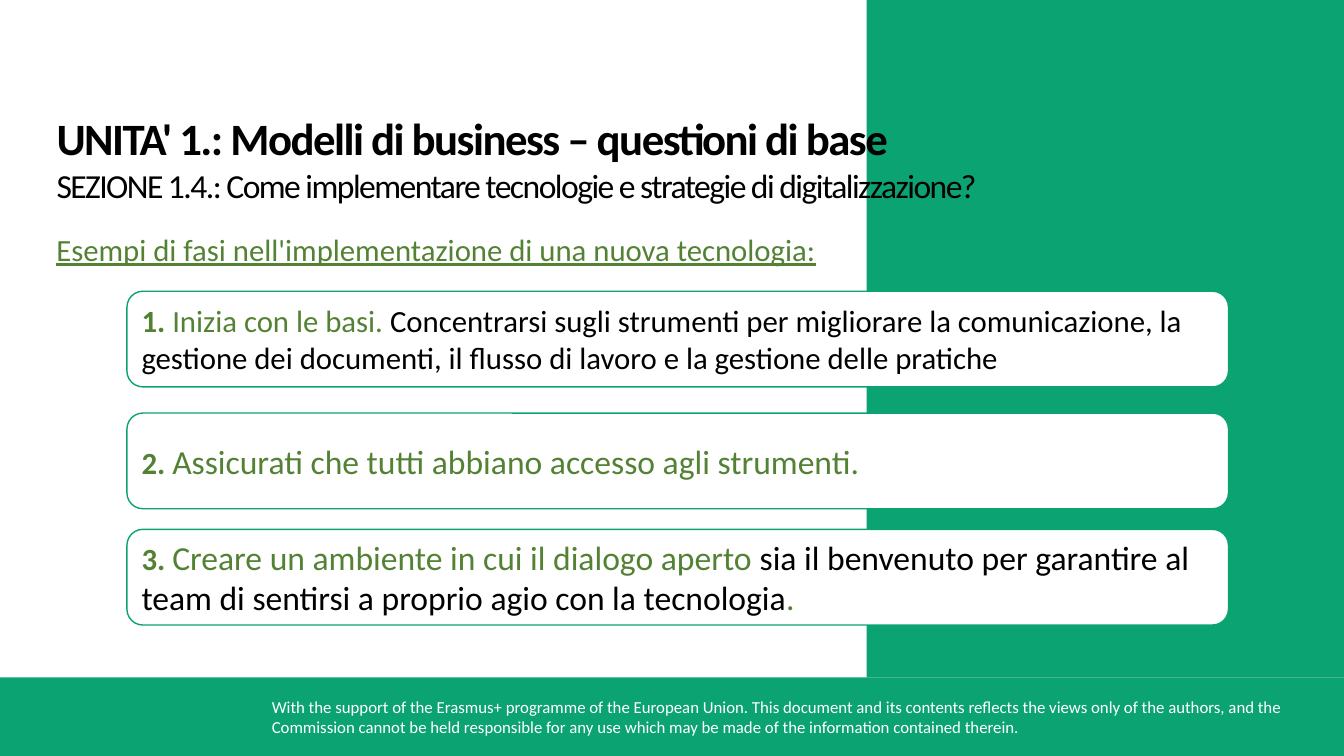
from pptx import Presentation
from pptx.dml.color import RGBColor
from pptx.enum.shapes import MSO_SHAPE
from pptx.enum.text import MSO_ANCHOR, PP_ALIGN
from pptx.util import Cm, Pt

COLORS = {
    "green": "0CA373",
    "accent": "548235",
    "black": "000000",
    "white": "FFFFFF",
}
FONT = "Calibri"


def add_run(paragraph, text, size, color, bold=False):
    run = paragraph.add_run()
    run.text = text
    run.font.name = FONT
    run.font.size = Pt(size)
    run.font.bold = bold
    run.font.color.rgb = RGBColor.from_string(COLORS[color])
    return run


def add_filled_shape(preset, left, top, width, height, fill):
    shape = slide.shapes.add_shape(preset, Cm(left), Cm(top), Cm(width), Cm(height))
    shape.shadow.inherit = False
    shape.fill.solid()
    shape.fill.fore_color.rgb = RGBColor.from_string(COLORS[fill])
    shape.line.fill.background()
    return shape


presentation = Presentation()
presentation.slide_width = Cm(33.87)
presentation.slide_height = Cm(19.05)
slide = presentation.slides.add_slide(presentation.slide_layouts[5])

# Green footer band and right-hand panel
add_filled_shape(MSO_SHAPE.RECTANGLE, 0, 17.07, 33.87, 1.98, "green")
footer = slide.shapes.add_textbox(Cm(6.6), Cm(17.42), Cm(26.47), Cm(1.27))
footer.text_frame.word_wrap = True
add_run(
    footer.text_frame.paragraphs[0],
    "With the support of the Erasmus+ programme of the European Union. "
    "This document and its contents reflects the views only of the authors, "
    "and the Commission cannot be held responsible for any use which may be "
    "made of the information contained therein.",
    12, "white",
)
add_filled_shape(MSO_SHAPE.RECTANGLE, 21.84, 0, 12.03, 17.07, "green")

# Title, brought in front of the panel
title = slide.shapes.title
slide.shapes._spTree.append(title._element)
title.left, title.top, title.width, title.height = Cm(1.17), Cm(2.67), Cm(32.39), Cm(2.8)
title_frame = title.text_frame
title_frame.word_wrap = True
title_frame.vertical_anchor = MSO_ANCHOR.TOP
title_lines = [
    ("UNITA' 1.: Modelli di business – questioni di base", 32, True),
    ("SEZIONE 1.4.: Come implementare tecnologie e strategie di digitalizzazione?", 24, False),
]
for index, (text, size, bold) in enumerate(title_lines):
    paragraph = title_frame.add_paragraph() if index else title_frame.paragraphs[0]
    paragraph.alignment = PP_ALIGN.LEFT
    run = add_run(paragraph, text, size, "black", bold)
    run._r.get_or_add_rPr().set("spc", "-110")

subtitle = slide.shapes.add_textbox(Cm(1.17), Cm(5.68), Cm(32.39), Cm(1.2))
subtitle.text_frame.word_wrap = True
subtitle_run = add_run(
    subtitle.text_frame.paragraphs[0],
    "Esempi di fasi nell'implementazione di una nuova tecnologia:",
    22, "accent",
)
subtitle_run.font.underline = True

# Numbered steps: top of the box, text size, pieces of text with their colours
steps = [
    (7.34, 22, [
        ("Inizia con le basi. ", "accent"),
        ("Concentrarsi sugli strumenti per migliorare la comunicazione, la gestione "
         "dei documenti, il flusso di lavoro e la gestione delle pratiche", "black"),
    ]),
    (10.41, 24, [
        ("Assicurati che tutti abbiano accesso agli strumenti.", "accent"),
    ]),
    (13.34, 24, [
        ("Creare un ambiente in cui il dialogo aperto ", "accent"),
        ("sia il benvenuto per garantire al team di sentirsi a proprio agio "
         "con la tecnologia", "black"),
        (".", "accent"),
    ]),
]
for number, (top, size, pieces) in enumerate(steps, start=1):
    box = add_filled_shape(MSO_SHAPE.ROUNDED_RECTANGLE, 3.2, top, 27.76, 2.41, "white")
    box.line.color.rgb = RGBColor.from_string(COLORS["green"])
    box.line.width = Pt(1)
    box.text_frame.word_wrap = True
    box.text_frame.vertical_anchor = MSO_ANCHOR.MIDDLE
    paragraph = box.text_frame.paragraphs[0]
    paragraph.alignment = PP_ALIGN.LEFT
    add_run(paragraph, f"{number}. ", 22, "accent", bold=True)
    for text, color in pieces:
        add_run(paragraph, text, size, color)

presentation.save("out.pptx")
